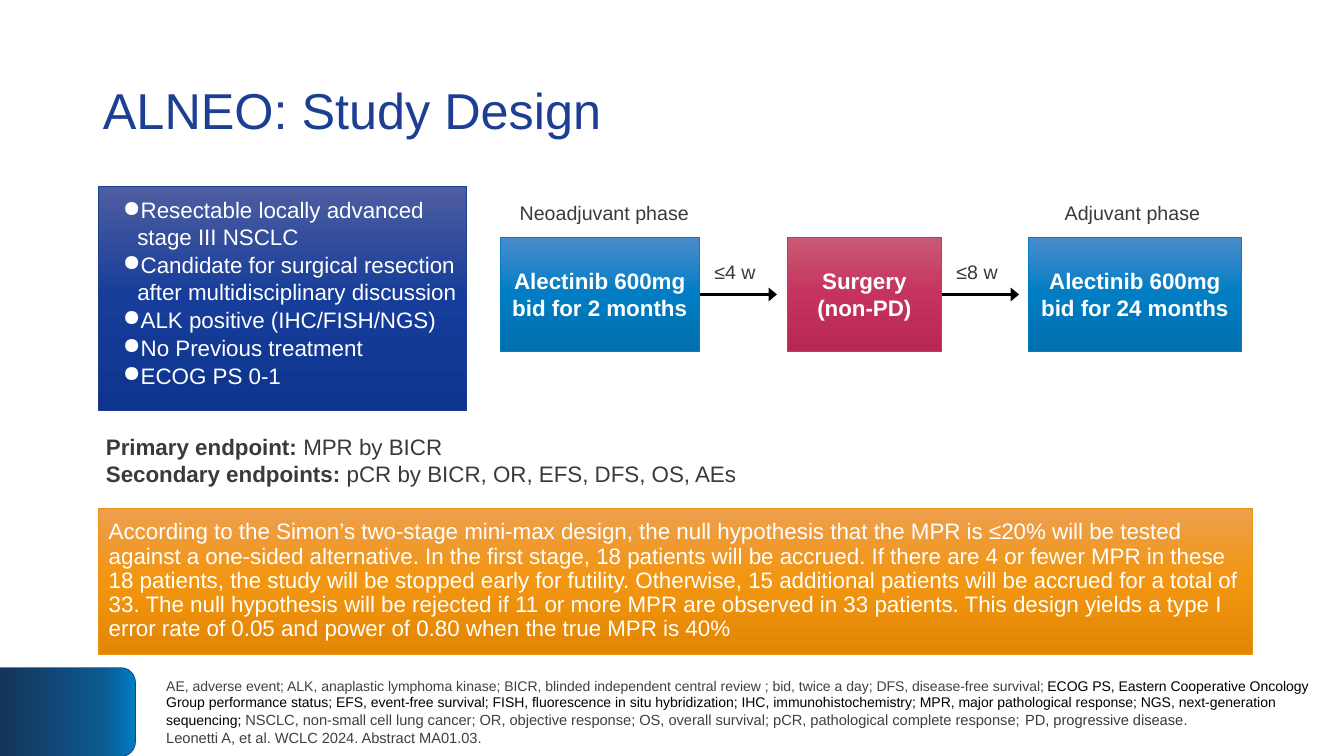
from lxml import etree
from pptx import Presentation
from pptx.dml.color import RGBColor
from pptx.enum.shapes import MSO_CONNECTOR, MSO_SHAPE as SHAPE
from pptx.enum.text import MSO_ANCHOR as ANCHOR, MSO_AUTO_SIZE, PP_ALIGN as ALIGN
from pptx.oxml.ns import qn
from pptx.util import Cm, Pt

COLORS = {"navy": "1C3F93", "blue": "007DC3", "red": "BF3A61", "orange": "E8931A",
          "white": "FFFFFF", "black": "000000", "text": "3A3A3A", "note": "404040"}
GRADIENTS = {
    "corner": ((0, "007DC3"), (25, "0B598F"), (100, "15345A")),
    "navy": ((0, "4E5DA1"), (50, "163D99"), (100, "0E348D")),
    "blue": ((0, "4B8CCB"), (50, "007DC3"), (100, "006FAD")),
    "red": ((0, "C95A74"), (50, "C6335E"), (100, "B62851")),
    "orange": ((0, "ED9F4E"), (50, "F29510"), (100, "E38603")),
}
CRITERIA = (
    "Resectable locally advanced stage III NSCLC",
    "Candidate for surgical resection after multidisciplinary discussion",
    "ALK positive (IHC/FISH/NGS)",
    "No Previous treatment",
    "ECOG PS 0-1",
)
PHASES = (
    (12.6, 5.03, "blue", "Alectinib 600mg bid for 2 months"),
    (19.84, 3.89, "red", "Surgery\n(non-PD)"),
    (25.91, 5.38, "blue", "Alectinib 600mg bid for 24 months"),
)
LABELS = (
    (12.83, 4.95, 4.8, "Neoadjuvant phase"),
    (26.14, 4.95, 4.8, "Adjuvant phase"),
    (17.75, 6.43, 1.55, "≤4 w"),
    (23.85, 6.43, 1.55, "≤8 w"),
)
ENDPOINTS = (
    ("Primary endpoint: ", "MPR by BICR"),
    ("Secondary endpoints: ", "pCR by BICR, OR, EFS, DFS, OS, AEs"),
)
DESIGN = (
    "According to the Simon’s two-stage mini-max design, the null hypothesis that the MPR is "
    "≤20% will be tested against a one-sided alternative. In the first stage, 18 patients will "
    "be accrued. If there are 4 or fewer MPR in these 18 patients, the study will be stopped "
    "early for futility. Otherwise, 15 additional patients will be accrued for a total of 33. "
    "The null hypothesis will be rejected if 11 or more MPR are observed in 33 patients. This "
    "design yields a type I error rate of 0.05 and power of 0.80 when the true MPR is 40%"
)
ABBREVIATIONS = (
    ("AE, adverse event; ALK, anaplastic lymphoma kinase; BICR, blinded independent central "
     "review ; bid, twice a day; DFS, disease-free survival; ", 10, "note"),
    ("ECOG PS, Eastern Cooperative Oncology Group performance status; EFS, event-free survival; "
     "FISH, fluorescence in situ hybridization; IHC, immunohistochemistry; MPR, major "
     "pathological response; NGS, next-generation sequencing; ", 10, "black"),
    ("NSCLC, non-small cell lung cancer; OR, objective response; OS, overall survival; pCR, "
     "pathological complete response; ", 10.5, "note"),
    ("PD, progressive disease", 10.5, "text"),
    (".", 10.5, "note"),
)
CITATION = "Leonetti A, et al. WCLC 2024. Abstract MA01.03."


def rgb(name):
    return RGBColor.from_string(COLORS[name])


def set_font(font, size, color, bold=False):
    font.name, font.size, font.bold = "Arial", Pt(size), bold
    font.color.rgb = rgb(color)


def add_gradient_box(slide, box, gradient, line, kind=SHAPE.RECTANGLE):
    sp = slide.shapes.add_shape(kind, *map(Cm, box))
    sp.shadow.inherit = False
    sp.line.color.rgb = rgb(line)
    sp.line.width = Pt(0.5)
    sp.fill.gradient()
    sp.fill.gradient_angle = 270
    stops = sp._element.spPr.find(".//" + qn("a:gsLst"))
    for stop in list(stops):
        stops.remove(stop)
    for position, color in GRADIENTS[gradient]:
        stop = etree.SubElement(stops, qn("a:gs"), pos=str(position * 1000))
        etree.SubElement(stop, qn("a:srgbClr"), val=color)
    return sp


def write(tf, text, size, color, align, bold=False):
    tf.word_wrap = True
    tf.vertical_anchor = ANCHOR.MIDDLE
    tf.text = text
    for p in tf.paragraphs:
        p.alignment = align
        set_font(p.font, size, color, bold)


def add_text_box(slide, box, wrap=True):
    tf = slide.shapes.add_textbox(*map(Cm, box)).text_frame
    tf.word_wrap = wrap
    return tf


def add_label(slide, left, top, width, text):
    tf = add_text_box(slide, (left, top, width, 0.86), wrap=False)
    tf.auto_size = MSO_AUTO_SIZE.SHAPE_TO_FIT_TEXT
    p = tf.paragraphs[0]
    p.text, p.alignment = text, ALIGN.CENTER
    set_font(p.font, 14, "text")


def add_arrow(slide, start, end, y):
    cxn = slide.shapes.add_connector(MSO_CONNECTOR.STRAIGHT, Cm(start), Cm(y), Cm(end), Cm(y))
    cxn.line.color.rgb = rgb("black")
    cxn.line.width = Pt(1.5)
    etree.SubElement(cxn.line._get_or_add_ln(), qn("a:tailEnd"), type="triangle", w="lg", len="med")
    etree.SubElement(cxn._element.spPr, qn("a:effectLst"))


def add_title(slide, text):
    title = slide.shapes.title
    title.left, title.top, title.width, title.height = map(Cm, (2.34, 1.02, 29.21, 3.68))
    write(title.text_frame, text, 36, "navy", ALIGN.LEFT)
    title.text_frame.auto_size = MSO_AUTO_SIZE.NONE
    title.text_frame.paragraphs[0].line_spacing = 0.9


def add_criteria(slide):
    tf = add_gradient_box(slide, (2.49, 4.7, 9.27, 5.64), "navy", "navy").text_frame
    write(tf, "\n".join(CRITERIA), 16, "white", ALIGN.LEFT)
    tf.vertical_anchor = ANCHOR.TOP
    tf.margin_left = tf.margin_right = tf.margin_bottom = 0
    tf.margin_top = Cm(0.25)
    for i, p in enumerate(tf.paragraphs):
        if i:
            p.space_before = Pt(0.8)
        pPr = p._p.get_or_add_pPr()
        pPr.set("marL", str(Cm(0.97)))
        pPr.set("indent", str(Cm(-0.36)))
        bullet_color = etree.Element(qn("a:buClr"))
        etree.SubElement(bullet_color, qn("a:srgbClr"), val=COLORS["white"])
        bullet = etree.Element(qn("a:buChar"), char="●")
        defaults = pPr.find(qn("a:defRPr"))
        defaults.addprevious(bullet_color)
        defaults.addprevious(bullet)


def add_endpoints(slide):
    tf = add_text_box(slide, (2.34, 10.59, 22.1, 2.46))
    tf.margin_left = tf.margin_top = tf.margin_right = tf.margin_bottom = Cm(0.33)
    for i, (name, measures) in enumerate(ENDPOINTS):
        p = tf.add_paragraph() if i else tf.paragraphs[0]
        for text, bold in ((name, True), (measures, False)):
            r = p.add_run()
            r.text = text
            set_font(r.font, 16, "text", bold)


def add_footnote(slide):
    tf = add_text_box(slide, (3.94, 16.81, 29.59, 2.24))
    tf.vertical_anchor = ANCHOR.MIDDLE
    for text, size, color in ABBREVIATIONS:
        r = tf.paragraphs[0].add_run()
        r.text = text
        set_font(r.font, size, color)
    p = tf.add_paragraph()
    p.text = CITATION
    set_font(p.font, 10.5, "note")


def main():
    """Build the ALNEO study design slide."""
    prs = Presentation()
    prs.slide_width, prs.slide_height = Cm(33.87), Cm(19.05)
    slide = prs.slides.add_slide(prs.slide_layouts[5])
    corner = add_gradient_box(slide, (0.58, 16.23, 2.24, 3.43), "corner", "navy",
                              SHAPE.ROUND_2_SAME_RECTANGLE)
    corner.rotation = 90
    add_title(slide, "ALNEO: Study Design")
    add_footnote(slide)
    add_criteria(slide)
    for left, width, color, text in PHASES:
        sp = add_gradient_box(slide, (left, 5.98, width, 2.87), color, color)
        write(sp.text_frame, text, 16, "white", ALIGN.CENTER, bold=True)
    for start, end in ((17.63, 19.58), (23.73, 25.68)):
        add_arrow(slide, start, end, 7.42)
    for label in LABELS:
        add_label(slide, *label)
    add_endpoints(slide)
    tf = add_gradient_box(slide, (2.49, 12.8, 29.06, 3.68), "orange", "orange").text_frame
    write(tf, DESIGN, 16, "white", ALIGN.LEFT)
    tf.paragraphs[0].line_spacing = 0.9
    prs.save("out.pptx")


if __name__ == "__main__":
    main()
